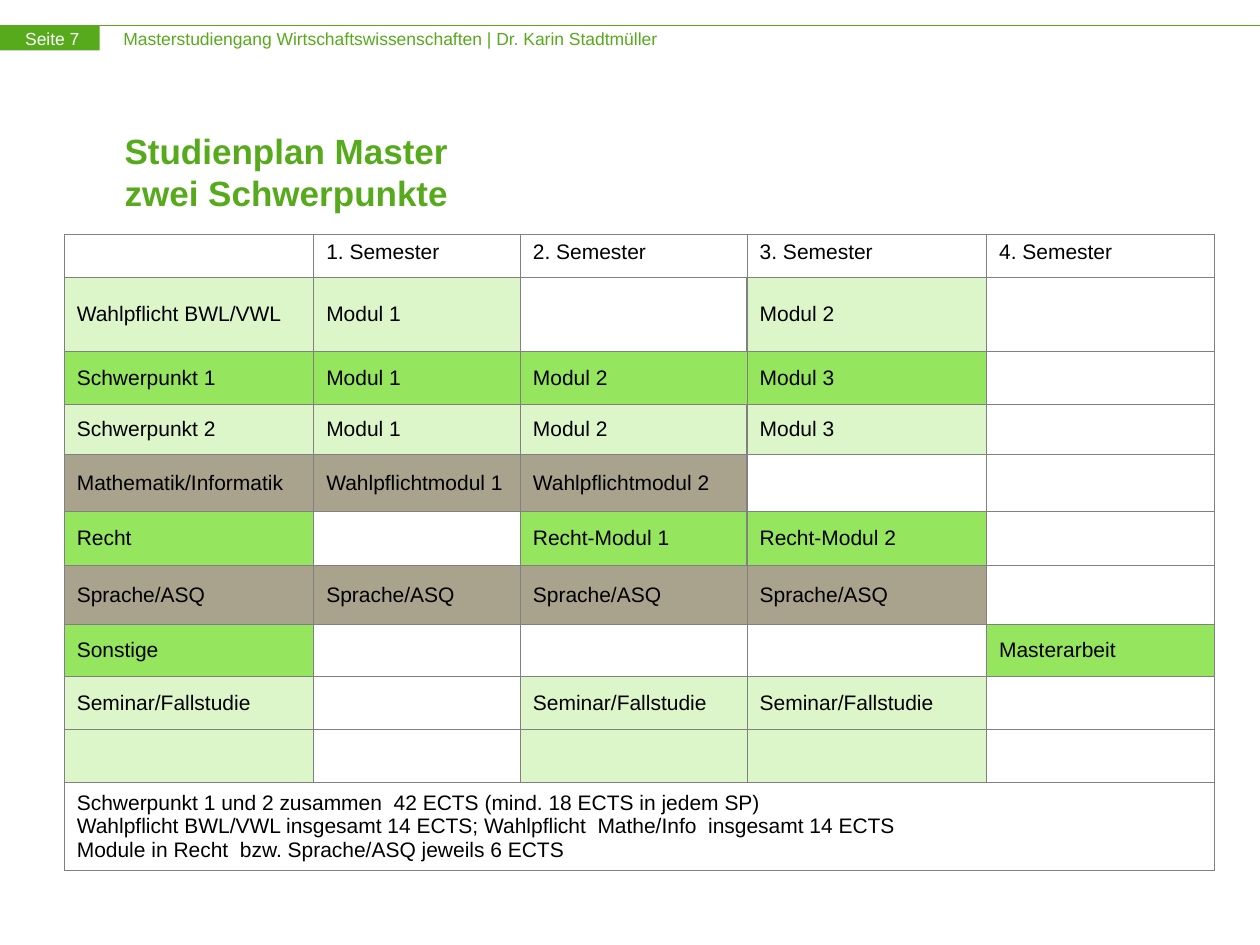
from dataclasses import dataclass
from typing import Optional

from pptx import Presentation
from pptx.dml.color import RGBColor as RGB
from pptx.enum.shapes import MSO_CONNECTOR as Conn, MSO_SHAPE as Shape
from pptx.enum.text import MSO_ANCHOR as Anchor
from pptx.oxml import parse_xml
from pptx.oxml.ns import nsdecls
from pptx.util import Inches, Pt


@dataclass(frozen=True)
class Theme:
    font: str = "Arial"
    green: str = "56AA1C"
    bright: str = "95E55E"
    pale: str = "DCF6C9"
    taupe: str = "A9A28D"
    white: str = "FFFFFF"
    black: str = "000000"
    border: str = "808080"
    small: float = 10
    body: float = 12
    title: float = 20
    thin: float = 0.75
    thick: float = 1


T = Theme()


@dataclass(frozen=True)
class Label:
    text: str
    box: tuple[float, float, float, float]
    size: float
    color: str
    bold: bool = False
    inset: float = 0
    anchor: Anchor = Anchor.TOP
    leading: Optional[float] = None


@dataclass(frozen=True)
class PlanRow:
    height: float
    cells: tuple[str, ...]
    fill: str = T.white
    filled: tuple[int, ...] = ()
    thick: tuple[int, ...] = ()
    anchor: Anchor = Anchor.MIDDLE


LABELS = (
    Label("Masterstudiengang Wirtschaftswissenschaften | Dr. Karin Stadtmüller",
          (0.98, 0.22, 6.6, 0.17), T.small, T.green),
    Label("Seite 7", (0.2, 0.22, 0.62, 0.17), T.small, T.white),
    Label("Studienplan Master\vzwei Schwerpunkte", (0.89, 1, 8.53, 0.72),
          T.title, T.green, True, 0.1, Anchor.MIDDLE, 24),
)

COL_WIDTHS = (1.98, 1.64, 1.8, 1.9, 1.81)
NOTES = "\n".join((
    "Schwerpunkt 1 und 2 zusammen  42 ECTS (mind. 18 ECTS in jedem SP)",
    "Wahlpflicht BWL/VWL insgesamt 14 ECTS; Wahlpflicht  Mathe/Info  insgesamt 14 ECTS",
    "Module in Recht  bzw. Sprache/ASQ jeweils 6 ECTS",
))
PLAN = (
    PlanRow(0.34, ("", *(f"{n}. Semester" for n in range(1, 5))), anchor=Anchor.TOP),
    PlanRow(0.59, ("Wahlpflicht BWL/VWL", "Modul 1", "", "Modul 2", ""),
            T.pale, (0, 1, 3), (1, 2, 3)),
    PlanRow(0.42, ("Schwerpunkt 1", "Modul 1", "Modul 2", "Modul 3", ""),
            T.bright, (0, 1, 2, 3), (3,)),
    PlanRow(0.4, ("Schwerpunkt 2", "Modul 1", "Modul 2", "Modul 3", ""),
            T.pale, (0, 1, 2, 3), (1, 2, 3)),
    PlanRow(0.45, ("Mathematik/Informatik", "Wahlpflichtmodul 1", "Wahlpflichtmodul 2", "", ""),
            T.taupe, (0, 1, 2), (1, 2)),
    PlanRow(0.43, ("Recht", "", "Recht-Modul 1", "Recht-Modul 2", ""),
            T.bright, (0, 2, 3), (1, 2)),
    PlanRow(0.47, ("Sprache/ASQ",) * 4 + ("",), T.taupe, (0, 1, 2, 3), (1,)),
    PlanRow(0.41, ("Sonstige", "", "", "", "Masterarbeit"), T.bright, (0, 4)),
    PlanRow(0.42, ("Seminar/Fallstudie", "", "Seminar/Fallstudie", "Seminar/Fallstudie", ""),
            T.pale, (0, 2, 3)),
    PlanRow(0.42, ("",) * 5, T.pale, (0, 2, 3)),
    PlanRow(0.66, (NOTES, "", "", "", "")),
)


def apply(obj, formats: dict) -> None:
    for name, value in formats.items():
        setattr(obj, name, value)


def style_text(tf, size: float, color: str, bold: bool = False) -> None:
    for p in tf.paragraphs:
        for r in p.runs:
            apply(r.font, {"name": T.font, "size": Pt(size), "bold": bold})
            r.font.color.rgb = RGB.from_string(color)


def draw_label(s, label: Label) -> None:
    tf = s.shapes.add_textbox(*map(Inches, label.box)).text_frame
    side, edge = Inches(label.inset), Inches(label.inset / 2)
    apply(tf, {"word_wrap": True, "vertical_anchor": label.anchor,
               "margin_left": side, "margin_right": side,
               "margin_top": edge, "margin_bottom": edge,
               "text": label.text})
    if label.leading:
        tf.paragraphs[0].line_spacing = Pt(label.leading)
    style_text(tf, label.size, label.color, label.bold)


def draw_header(s) -> None:
    rule = s.shapes.add_connector(Conn.STRAIGHT, 0, Inches(0.2), Inches(10), Inches(0.2))
    rule.line.color.rgb = RGB.from_string(T.green)
    rule.line.width = Pt(T.thin)
    rule._element.spPr.append(parse_xml(f"<a:effectLst {nsdecls('a')}/>"))
    sp = s.shapes.add_shape(Shape.RECTANGLE, 0, Inches(0.2), Inches(0.79), Inches(0.2))
    sp.shadow.inherit = False
    sp.fill.solid()
    sp.fill.fore_color.rgb = RGB.from_string(T.green)
    sp.line.fill.background()


def set_borders(cell, row: PlanRow, col: int) -> None:
    thick_edges = {"L": col - 1 in row.thick, "R": col in row.thick}
    for edge in "LRTB":
        width = Pt(T.thick if thick_edges.get(edge) else T.thin)
        cell._tc.get_or_add_tcPr().append(parse_xml(
            f'<a:ln{edge} {nsdecls("a")} w="{int(width)}"><a:solidFill>'
            f'<a:srgbClr val="{T.border}"/></a:solidFill></a:ln{edge}>'))


def draw_plan(s, left: float, top: float) -> None:
    size = (sum(COL_WIDTHS), sum(row.height for row in PLAN))
    table = s.shapes.add_table(len(PLAN), len(COL_WIDTHS),
                               *map(Inches, (left, top, *size))).table
    apply(table, {"first_row": False, "horz_banding": False})
    for column, width in zip(table.columns, COL_WIDTHS):
        column.width = Inches(width)
    last = len(PLAN) - 1
    table.cell(last, 0).merge(table.cell(last, len(COL_WIDTHS) - 1))
    for i, row in enumerate(PLAN):
        table.rows[i].height = Inches(row.height)
        for j, text in enumerate(row.cells):
            cell = table.cell(i, j)
            set_borders(cell, row, j)
            cell.fill.solid()
            cell.fill.fore_color.rgb = RGB.from_string(row.fill if j in row.filled else T.white)
            cell.vertical_anchor = row.anchor
            if text:
                cell.text = text
                style_text(cell.text_frame, T.body, T.black)
            else:
                end = cell.text_frame.paragraphs[0]._p.get_or_add_endParaRPr()
                end.set("sz", str(int(T.body * 100)))


def main() -> None:
    prs = Presentation()
    apply(prs, {"slide_width": Inches(10), "slide_height": Inches(7.5)})
    s = prs.slides.add_slide(prs.slide_layouts[6])
    draw_header(s)
    for label in LABELS:
        draw_label(s, label)
    draw_plan(s, 0.51, 1.86)
    prs.save("out.pptx")


if __name__ == "__main__":
    main()
